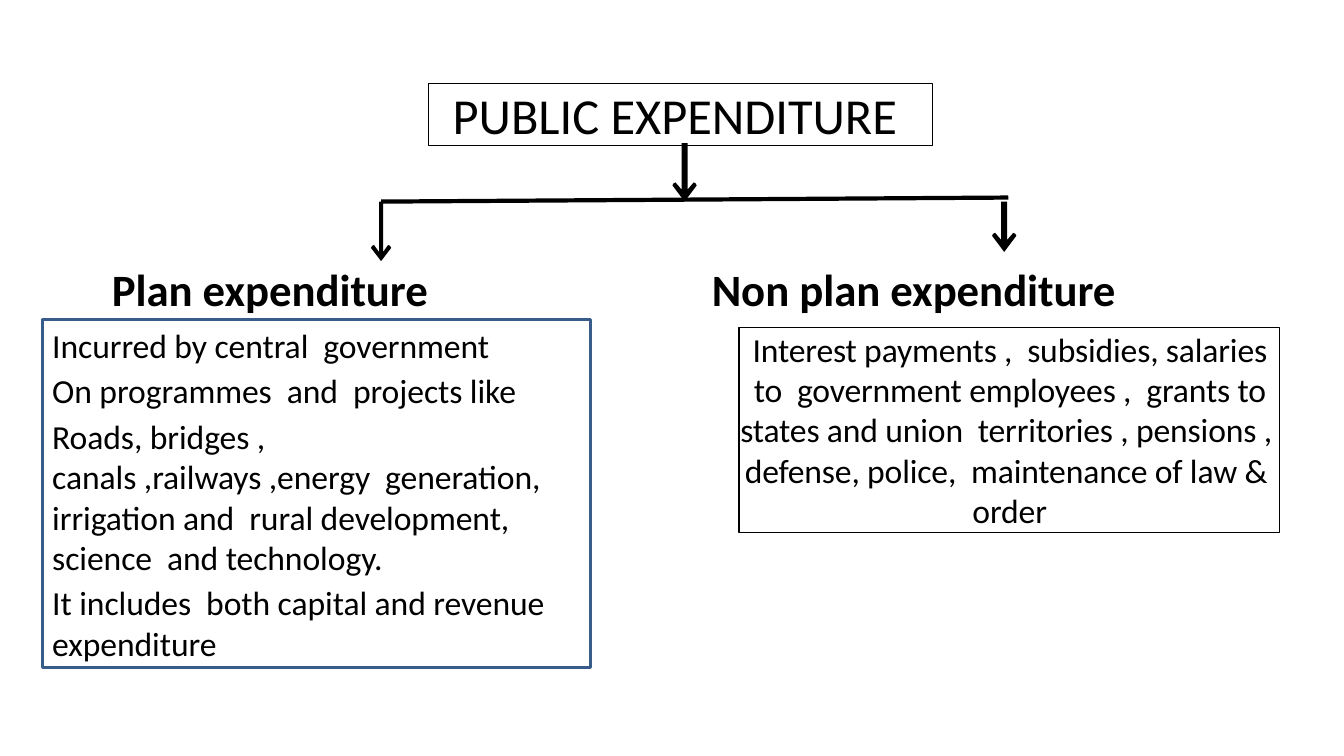
from pptx import Presentation, util as u
from pptx.dml.color import RGBColor
from pptx.enum import shapes, text
from pptx.oxml.ns import qn
from lxml import etree

BLACK = RGBColor(0, 0, 0)
BLUE = RGBColor(0x38, 0x5D, 0x8A)
PX = 9144

deck = Presentation()
deck.slide_width, deck.slide_height = 1333 * PX, 750 * PX
slide = deck.slides.add_slide(deck.slide_layouts[6])


def write(box, words, size=24, bold=False, align=text.PP_ALIGN.LEFT,
          left=0, top=0, right=0, gap=0, space=-5, tab=None):
    frame = box.text_frame
    frame.word_wrap = True
    frame.vertical_anchor = text.MSO_ANCHOR.TOP
    frame.margin_left, frame.margin_top = left * PX, top * PX
    frame.margin_right, frame.margin_bottom = right * PX, 0
    frame.text = words
    for i, para in enumerate(frame.paragraphs):
        para.alignment = align
        para.space_before = u.Pt(gap if i else 0)
        if tab:
            stops = etree.SubElement(para._p.get_or_add_pPr(), qn("a:tabLst"))
            etree.SubElement(stops, qn("a:tab"), pos=str(tab * PX), algn="l")
        for run in para.runs:
            run.font.name, run.font.size = "Calibri", u.Pt(size)
            run.font.bold, run.font.color.rgb = bold, BLACK
            run._r.get_or_add_rPr().set("spc", str(space))


def frame(x, y, w, h, color, width):
    box = slide.shapes.add_shape(shapes.MSO_SHAPE.RECTANGLE, x * PX, y * PX, w * PX, h * PX)
    box.shadow.inherit = False
    box.fill.background()
    box.line.color.rgb, box.line.width = color, u.Pt(width)
    return box


heads = slide.shapes.add_textbox(100 * PX, 258 * PX, 1156 * PX, 56 * PX)
write(heads, "Plan expenditure\tNon plan expenditure", size=32, bold=True,
      left=11, top=2, tab=595)

for mid, top, tip, half, wing, notch in (
    (679, 142, 200, 3, 12, 12),
    (378, 200, 259, 2, 10, 9),
    (996, 200, 250, 3, 12, 12),
):
    side = [(half, top), (half, tip - notch), (wing - 3, tip - notch - 7),
            (wing - 1, tip - notch - 6), (wing, tip - notch - 4)]
    right = [(mid + x, y) for x, y in side]
    left = [(mid - x, y) for x, y in side]
    pen = slide.shapes.build_freeform(*left[0], scale=PX)
    pen.add_line_segments(right + [(mid, tip)] + left[::-1], close=True)
    arrow = pen.convert_to_shape()
    arrow.shadow.inherit = False
    arrow.fill.solid()
    arrow.fill.fore_color.rgb = BLACK
    arrow.line.fill.background()

bar = slide.shapes.add_connector(
    shapes.MSO_CONNECTOR.STRAIGHT, 378 * PX, 200 * PX, 1000 * PX, 196 * PX)
bar.line.color.rgb, bar.line.width = BLACK, u.Pt(3)
etree.SubElement(bar._element.spPr, qn("a:effectLst"))

plan = frame(42, 317, 544, 345, BLUE, 2.04)
write(plan, "Incurred by central  government\n"
      "On programmes  and  projects like\n"
      "Roads, bridges ,\vcanals ,railways ,energy  generation, irrigation and  "
      "rural development, science  and technology.\n"
      "It includes  both capital and revenue  expenditure",
      left=10, top=5, gap=3.8)

other = frame(733, 325, 536, 203, BLACK, 0.75)
write(other, "Interest payments ,  subsidies, salaries to  government employees ,  "
      "grants to states and union  territories , pensions ,  defense, police,  "
      "maintenance of law &  order",
      align=text.PP_ALIGN.CENTER, left=1, top=1, space=-10)

title = frame(425, 83, 500, 61, BLACK, 0.75)
write(title, "PUBLIC EXPENDITURE", size=36, align=text.PP_ALIGN.CENTER, right=11, space=0)

deck.save("out.pptx")
